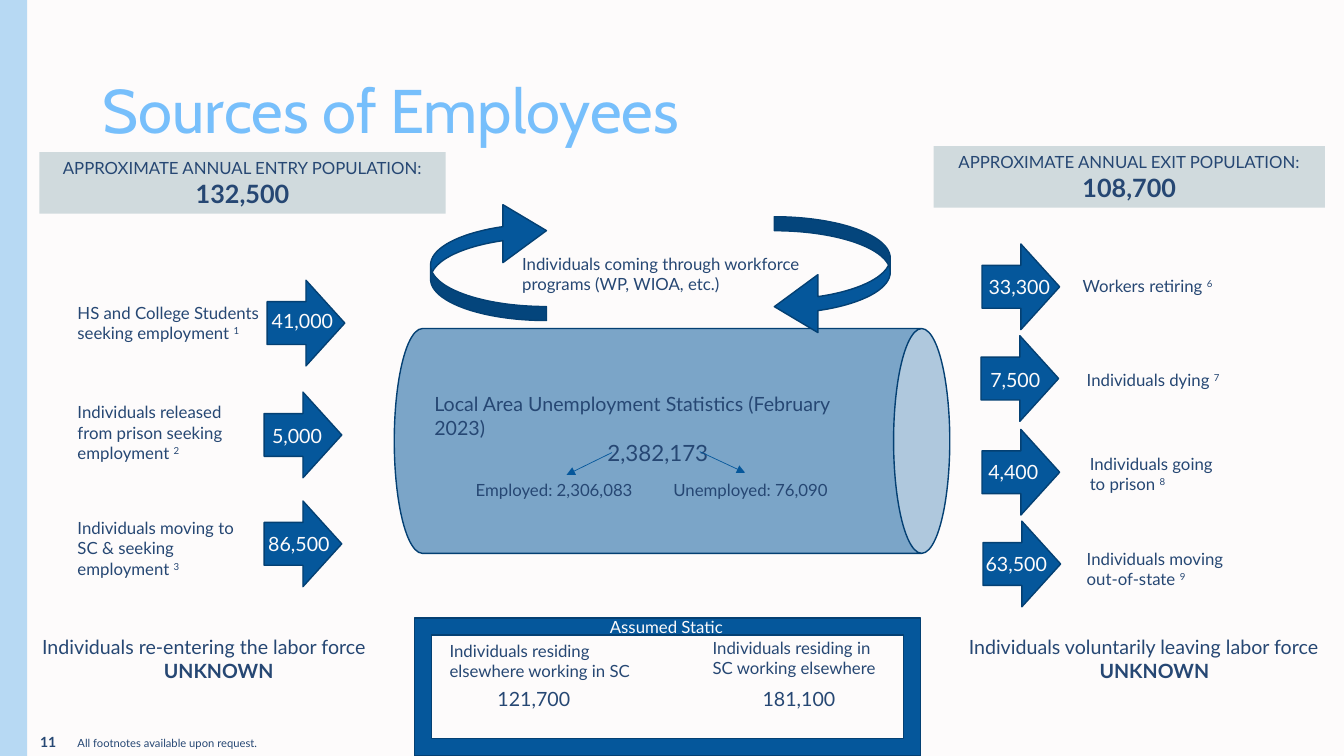
from dataclasses import dataclass

from lxml import etree
from pptx import Presentation
from pptx import util as u
from pptx.dml.color import RGBColor
from pptx.enum import shapes, text
from pptx.oxml import ns

PAPER = RGBColor(0xFD, 0xFB, 0xFB)
SKY = RGBColor(0xB7, 0xD9, 0xF3)
TITLE_BLUE = RGBColor(0x77, 0xBF, 0xFB)
BLUE = RGBColor(0x05, 0x57, 0x9B)
EDGE = RGBColor(0x04, 0x40, 0x73)
INK = RGBColor(0x26, 0x47, 0x73)
MIST = RGBColor(0xD0, 0xDA, 0xDD)

LEFT = text.PP_ALIGN.LEFT
CENTER = text.PP_ALIGN.CENTER
SHAPE = shapes.MSO_SHAPE
CELL = u.Inches(0.1)
COLUMNS, ROWS = 133.3, 75


@dataclass
class Line:
    words: str
    size: int = 12
    align: int = LEFT
    bold: bool = False
    note: str = ""
    rows: int = 1


class Board:
    font = "Lato"

    def __init__(self, deck):
        self.page = deck.slides.add_slide(deck.slide_layouts[5])
        self.page.background.fill.solid()
        self.page.background.fill.fore_color.rgb = PAPER

    def cells(self, *lengths):
        return [round(length * CELL) for length in lengths]

    def title(self, words, left, top, width, height):
        box = self.page.shapes.title
        box.left, box.top, box.width, box.height = self.cells(left, top, width, height)
        frame = box.text_frame
        frame.text = words
        frame.auto_size = text.MSO_AUTO_SIZE.NONE
        frame.vertical_anchor = text.MSO_ANCHOR.MIDDLE
        para = frame.paragraphs[0]
        para.alignment = LEFT
        para.line_spacing = 0.9
        para.font.name = "Cabin"
        para.font.size = u.Pt(44)
        para.font.color.rgb = TITLE_BLUE

    def shape(self, kind, left, top, width, height, fill=BLUE, edge=EDGE,
              turn=0, adjust=(), opacity=100):
        box = self.page.shapes.add_shape(kind, *self.cells(left, top, width, height))
        box.shadow.inherit = False
        box.rotation = turn
        box.fill.solid()
        box.fill.fore_color.rgb = fill
        if edge is None:
            box.line.fill.background()
        else:
            box.line.color.rgb = edge
            box.line.width = u.Pt(1)
        for index, value in enumerate(adjust):
            box.adjustments[index] = value
        if opacity < 100:
            color = box._element.spPr.find(ns.qn("a:solidFill")).find(ns.qn("a:srgbClr"))
            etree.SubElement(color, ns.qn("a:alpha"), val=str(opacity * 1000))
        return box

    def fill_text(self, box, lines, color=INK):
        frame = box.text_frame
        frame.word_wrap = True
        frame.auto_size = text.MSO_AUTO_SIZE.SHAPE_TO_FIT_TEXT
        for index, line in enumerate(lines):
            para = frame.add_paragraph() if index else frame.paragraphs[0]
            para.alignment = line.align
            para.font.name = self.font
            para.font.size = u.Pt(line.size)
            para.font.bold = line.bold
            para.font.color.rgb = color
            para.add_run().text = line.words
            if line.note:
                span = para.add_run()
                span.text = line.note
                span._r.get_or_add_rPr().set("baseline", "30000")

    def text(self, left, top, width, *lines, color=INK):
        height = 1 + sum(line.size * line.rows for line in lines) / 6
        box = self.page.shapes.add_textbox(*self.cells(left, top, width, height))
        self.fill_text(box, lines, color)

    def banner(self, left, top, width, heading, total):
        box = self.shape(SHAPE.RECTANGLE, left, top, width, 6.1, MIST, None)
        self.fill_text(box, [Line(heading, 12, CENTER), Line(total, 18, CENTER, True)])

    def flow(self, arrow, amount, label):
        self.shape(SHAPE.DOWN_ARROW, *arrow, 8.5, 7.7, turn=270)
        left, top, width, words, align = amount
        self.text(left, top, width, Line(words, 14, align), color=PAPER)
        left, top, width, words, note, rows = label
        self.text(left, top, width, Line(words, note=note, rows=rows))

    def pointer(self, *ends):
        link = self.page.shapes.add_connector(
            shapes.MSO_CONNECTOR.STRAIGHT, *self.cells(*ends))
        link.line.color.rgb = BLUE
        link.line.width = u.Pt(0.5)
        edge = link._element.spPr.find(ns.qn("a:ln"))
        etree.SubElement(edge, ns.qn("a:tailEnd"), type="triangle")
        etree.SubElement(link._element.spPr, ns.qn("a:effectLst"))


FLOWS = [
    ((26.1, 28.2), (25.5, 30.2, 9, "41,000", CENTER),
     (6.7, 29.5, 20.3, "HS and College Students seeking employment ", "1", 2)),
    ((25.8, 39.3), (26, 41.6, 9, "5,000", LEFT),
     (6.7, 39.4, 18.5, "Individuals released from prison seeking employment ", "2", 3)),
    ((25.8, 50.1), (24.7, 52.3, 9.9, "86,500", CENTER),
     (6.7, 50.9, 18.5, "Individuals moving to SC & seeking employment ", "3", 3)),
    ((97, 24.6), (96, 26.8, 10.2, "33,300", CENTER),
     (106.4, 26.9, 20.5, "Workers retiring ", "6", 1)),
    ((96.9, 33.7), (95.6, 36, 10.2, "7,500", CENTER),
     (106.8, 36.2, 18, "Individuals dying ", "7", 1)),
    ((97, 43), (95.4, 45.1, 10.2, "4,400", CENTER),
     (107.1, 44.5, 15.1, "Individuals going to prison ", "8", 2)),
    ((97.1, 52.1), (95.7, 54.3, 10.2, "63,500", CENTER),
     (106.8, 53.9, 17.3, "Individuals moving out-of-state ", "9", 2)),
]
UNKNOWNS = [
    (3.2, 37, "Individuals re-entering the labor force"),
    (95.1, 38.8, "Individuals voluntarily leaving labor force"),
]
STATIC = [
    (43.6, 63.1, 23.1, "Individuals residing elsewhere working in SC", 47, 11.9, "121,700"),
    (69.7, 62.8, 19.6, "Individuals residing in SC working elsewhere", 74, 10.5, "181,100"),
]


def main():
    deck = Presentation()
    deck.slide_width, deck.slide_height = round(COLUMNS * CELL), ROWS * CELL
    board = Board(deck)
    board.shape(SHAPE.RECTANGLE, 0, 0, 2.7, ROWS, SKY, None)
    board.title("Sources of Employees", 9.2, 4, 115, 14.5)

    board.shape(SHAPE.CAN, 55.5, 16.2, 22.3, 55.1, turn=90, opacity=52)
    board.text(42.1, 38.4, 46.3,
               Line("Local Area Unemployment Statistics (February 2023)", 14, rows=2),
               Line("2,382,173", 16, CENTER))
    board.pointer(60.7, 44.9, 56.2, 47.1)
    board.pointer(69.4, 44.8, 73.9, 46.9)
    board.text(46.2, 47.1, 20.3, Line("Employed: 2,306,083"))
    board.text(65.8, 47.1, 20.3, Line("Unemployed: 76,090"))

    for left, top, turn in [(76.8, 21.5, 0), (42.7, 20, 180)]:
        board.shape(SHAPE.CURVED_LEFT_ARROW, left, top, 11.5, 11.8,
                    turn=turn, adjust=(0.121, 0.5, 0.376))
    board.text(50.8, 24.7, 32.2, Line(
        "Individuals coming through workforce programs (WP, WIOA, etc.)", rows=2))

    for arrow, amount, label in FLOWS:
        board.flow(arrow, amount, label)
    board.banner(3.9, 15.1, 40.3, "APPROXIMATE ANNUAL ENTRY POPULATION:", "132,500")
    board.banner(92.6, 14.5, 38.8, "APPROXIMATE ANNUAL EXIT POPULATION:", "108,700")
    for left, width, words in UNKNOWNS:
        board.text(left, 62.5, width, Line(words, 14), Line("UNKNOWN", 14, CENTER, True))

    board.shape(SHAPE.FRAME, 41.1, 61.3, 50.2, 13.7)
    board.text(50.8, 60.7, 30.6, Line("Assumed Static", 12, CENTER), color=PAPER)
    for left, top, width, words, total_left, total_width, total in STATIC:
        board.text(left, top, width, Line(words, rows=2))
        board.text(total_left, 67.7, total_width, Line(total, 14, CENTER))

    board.text(6.7, 72.6, 28.3, Line("All footnotes available upon request.", 8))
    board.text(3, 72.3, 3.7, Line("11", 10, bold=True))
    deck.save("out.pptx")


if __name__ == "__main__":
    main()
